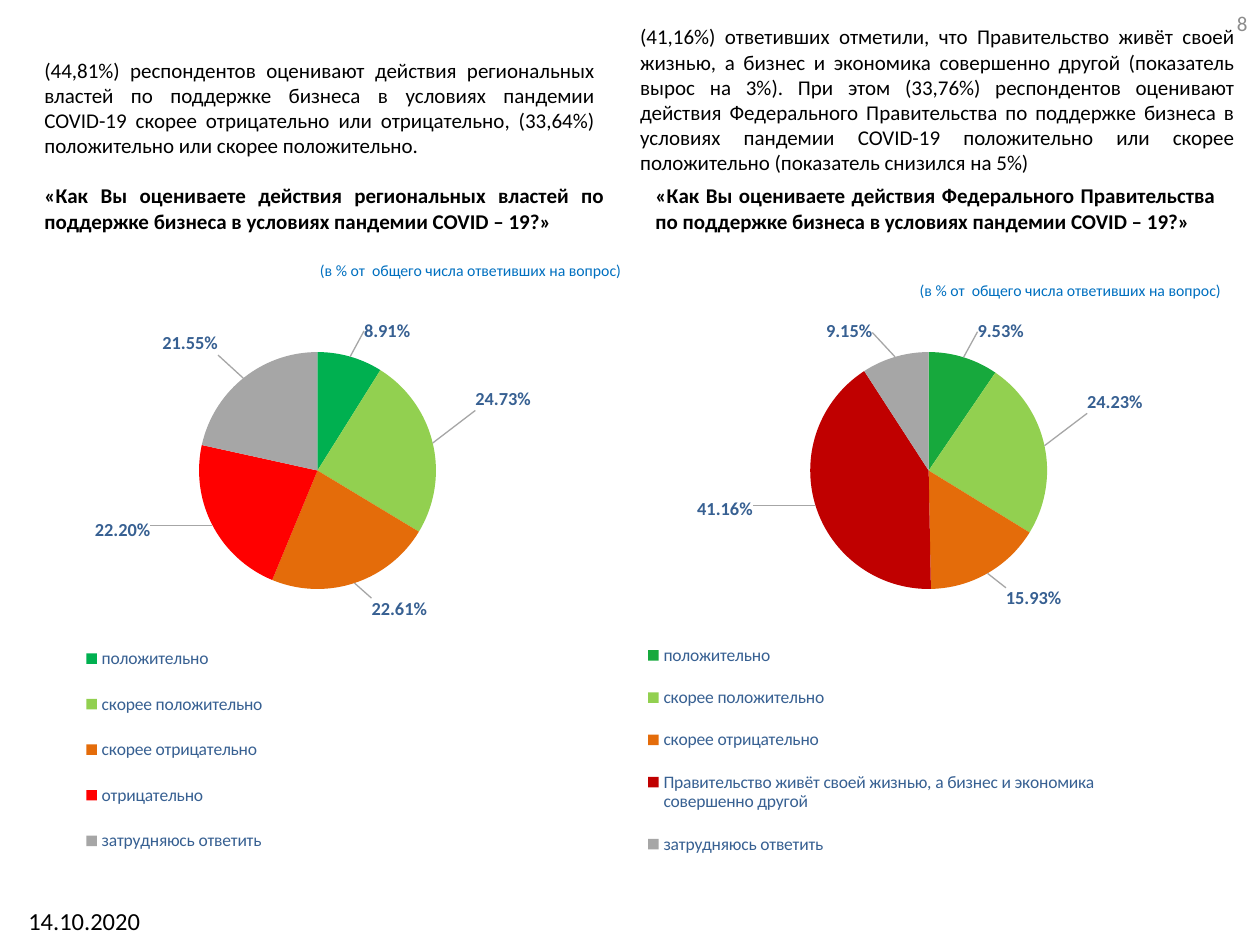
from lxml import etree
from pptx import Presentation
from pptx.chart import data
from pptx.dml.color import RGBColor
from pptx.enum import chart as ch, text
from pptx.oxml import ns
from pptx.util import Cm, Pt

COLORS = {"text": "000000", "note": "0070C0", "number": "8C8C8C", "label": "376092",
          "leader": "A6A6A6", "good": "00B050", "good2": "17A93D", "rather_good": "92D050",
          "rather_bad": "E46C0A", "bad": "FF0000", "detached": "C00000", "unsure": "A6A6A6"}
FONT = "Calibri"
NOTE = "(в % от  общего числа ответивших на вопрос)"
PLOT_LAYOUT = (0.185, 0.052, 0.705, 0.383)
# Shift of each label from its place at the slice edge, as a share of the chart
LABEL_SHIFTS = [(0.02, -0.03), (0.06, -0.05), (0.025, 0.013), (-0.094, -0.015), (-0.035, -0.028)]


def style_font(font, size, color, bold=False):
    font.name, font.size, font.bold = FONT, Pt(size), bold
    font.color.rgb = RGBColor.from_string(COLORS[color])


def place(sp, x, y, w, h):
    sp.left, sp.top, sp.width, sp.height = Cm(x), Cm(y), Cm(w), Cm(h)


def write(sp, words, size, color="text", bold=False, align=None, anchor=text.MSO_ANCHOR.TOP, wrap=True):
    tf = sp.text_frame
    tf.text = words
    tf.word_wrap, tf.vertical_anchor = wrap, anchor
    tf.auto_size = text.MSO_AUTO_SIZE.NONE
    p = tf.paragraphs[0]
    p.alignment = align
    style_font(p.runs[0].font, size, color, bold)
    return p


def add_text(s, box, words, size, **look):
    sp = s.shapes.add_textbox(*map(Cm, box))
    write(sp, words, size, **look)


def fill_body(sp, box, words, **look):
    place(sp, *box)
    p = write(sp, words, 12, align=text.PP_ALIGN.JUSTIFY, **look)
    pPr = p._p.get_or_add_pPr()
    pPr.set("marL", "0")
    pPr.set("indent", "0")
    etree.SubElement(pPr, ns.qn("a:buNone"))


def set_layout(parent, index, **values):
    """Give a chart part a manual layout, in shares of the chart."""
    for old in parent.findall(ns.qn("c:layout")):
        parent.remove(old)
    layout = etree.Element(ns.qn("c:layout"))
    manual = etree.SubElement(layout, ns.qn("c:manualLayout"))
    for tag, value in values.items():
        etree.SubElement(manual, ns.qn(f"c:{tag}")).set("val", str(value))
    parent.insert(index, layout)


def add_frame_layout(parent, index, box, **target):
    x, y, w, h = box
    set_layout(parent, index, **target, xMode="edge", yMode="edge", x=x, y=y, w=w, h=h)


def add_pie(s, box, slices, legend_box):
    chart_data = data.CategoryChartData(number_format="0.00%")
    chart_data.categories = [name for name, _, _ in slices]
    chart_data.add_series("Series 1", [value for _, value, _ in slices])
    chart = s.shapes.add_chart(ch.XL_CHART_TYPE.PIE, *map(Cm, box), chart_data).chart
    chart.has_title = False
    style_font(chart.font, 10, "text")
    plot_area = chart._chartSpace.find(".//" + ns.qn("c:plotArea"))
    add_frame_layout(plot_area, 0, PLOT_LAYOUT, layoutTarget="inner")

    chart.has_legend = True
    chart.legend.position = ch.XL_LEGEND_POSITION.BOTTOM
    chart.legend.include_in_layout = False
    style_font(chart.legend.font, 10, "label")
    add_frame_layout(chart.legend._element, 1, legend_box)

    series = chart.plots[0].series[0]
    labels = series.data_labels
    labels.show_value = True
    labels.number_format, labels.number_format_is_linked = "0.00%", False
    labels.position = ch.XL_LABEL_POSITION.OUTSIDE_END
    style_font(labels.font, 10.5, "label", True)
    for i, (_, _, color) in enumerate(slices):
        point = series.points[i]
        point.format.fill.solid()
        point.format.fill.fore_color.rgb = RGBColor.from_string(COLORS[color])
        point.data_label.position = ch.XL_LABEL_POSITION.OUTSIDE_END
        style_font(point.data_label.font, 10.5, "label", True)
    dLbls = series._element.find(ns.qn("c:dLbls"))
    for dLbl, (x, y) in zip(dLbls.findall(ns.qn("c:dLbl")), LABEL_SHIFTS):
        set_layout(dLbl, 1, x=x, y=y)
    leaders = etree.SubElement(dLbls, ns.qn("c:leaderLines"))
    spPr = etree.SubElement(leaders, ns.qn("c:spPr"))
    ln = etree.SubElement(spPr, ns.qn("a:ln"), w="9525")
    fill = etree.SubElement(ln, ns.qn("a:solidFill"))
    etree.SubElement(fill, ns.qn("a:srgbClr"), val=COLORS["leader"])


def add_survey(s, left, holders, summary, summary_box, question, question_height, note_at, slices, legend_box):
    """Place one half: summary, question, note and pie, with x measured from left."""
    def shift(x, *rest):
        return (left + x, *rest)

    summary_sp, question_sp = (s.placeholders[i] for i in holders)
    fill_body(summary_sp, shift(*summary_box), summary, anchor=text.MSO_ANCHOR.BOTTOM)
    fill_body(question_sp, shift(0.64, 3.56, 11.8, question_height), question, bold=True)
    add_text(s, shift(*note_at, 6.63, 0.64), NOTE, 9, color="note", wrap=False)
    add_pie(s, shift(0, 6.45, 11.91, 12.47), slices, legend_box)


def answers(values, good, negative, negative_color):
    names = ["положительно", "скорее положительно", "скорее отрицательно", negative, "затрудняюсь ответить"]
    return list(zip(names, values, [good, "rather_good", "rather_bad", negative_color, "unsure"]))


def main():
    prs = Presentation()
    prs.slide_width, prs.slide_height = Cm(25.4), Cm(19.05)
    s = prs.slides.add_slide(prs.slide_layouts.get_by_name("Comparison"))
    title = s.shapes.title._element
    title.getparent().remove(title)

    add_survey(
        s, 0, (1, 2),
        "(44,81%) респондентов оценивают действия региональных властей по поддержке бизнеса в условиях "
        "пандемии COVID-19 скорее отрицательно или отрицательно, (33,64%) положительно или скорее положительно.",
        (0.64, 1.07, 11.61, 2.24),
        "«Как Вы оцениваете действия региональных властей по поддержке бизнеса в условиях пандемии COVID – 19?»",
        3.76, (6.2, 5.13),
        answers([0.0891, 0.2473, 0.2261, 0.222, 0.2155], "good", "отрицательно", "bad"),
        (0.12, 0.49, 0.35, 0.41))
    add_survey(
        s, 12.32, (3, 4),
        "(41,16%) ответивших отметили, что Правительство живёт своей жизнью, а бизнес и экономика совершенно "
        "другой (показатель вырос на 3%). При этом (33,76%) респондентов оценивают действия Федерального "
        "Правительства по поддержке бизнеса в условиях пандемии COVID-19 положительно или скорее положительно "
        "(показатель снизился на 5%)",
        (0.33, 0.97, 12.5, 2.69),
        "«Как Вы оцениваете действия Федерального Правительства по поддержке бизнеса в условиях пандемии "
        "COVID – 19?»",
        12.5, (5.97, 5.54),
        answers([0.0953, 0.2423, 0.1593, 0.4116, 0.0915], "good2",
                "Правительство живёт своей жизнью, а бизнес и экономика совершенно другой", "detached"),
        (0.04, 0.49, 0.8, 0.41))

    add_text(s, (19.48, -0.05, 5.92, 1.02), "8", 12, color="number",
             align=text.PP_ALIGN.RIGHT, anchor=text.MSO_ANCHOR.MIDDLE)
    add_text(s, (0, 18.14, 3.4, 0.91), "14.10.2020", 14, align=text.PP_ALIGN.CENTER)
    prs.save("out.pptx")


if __name__ == "__main__":
    main()
